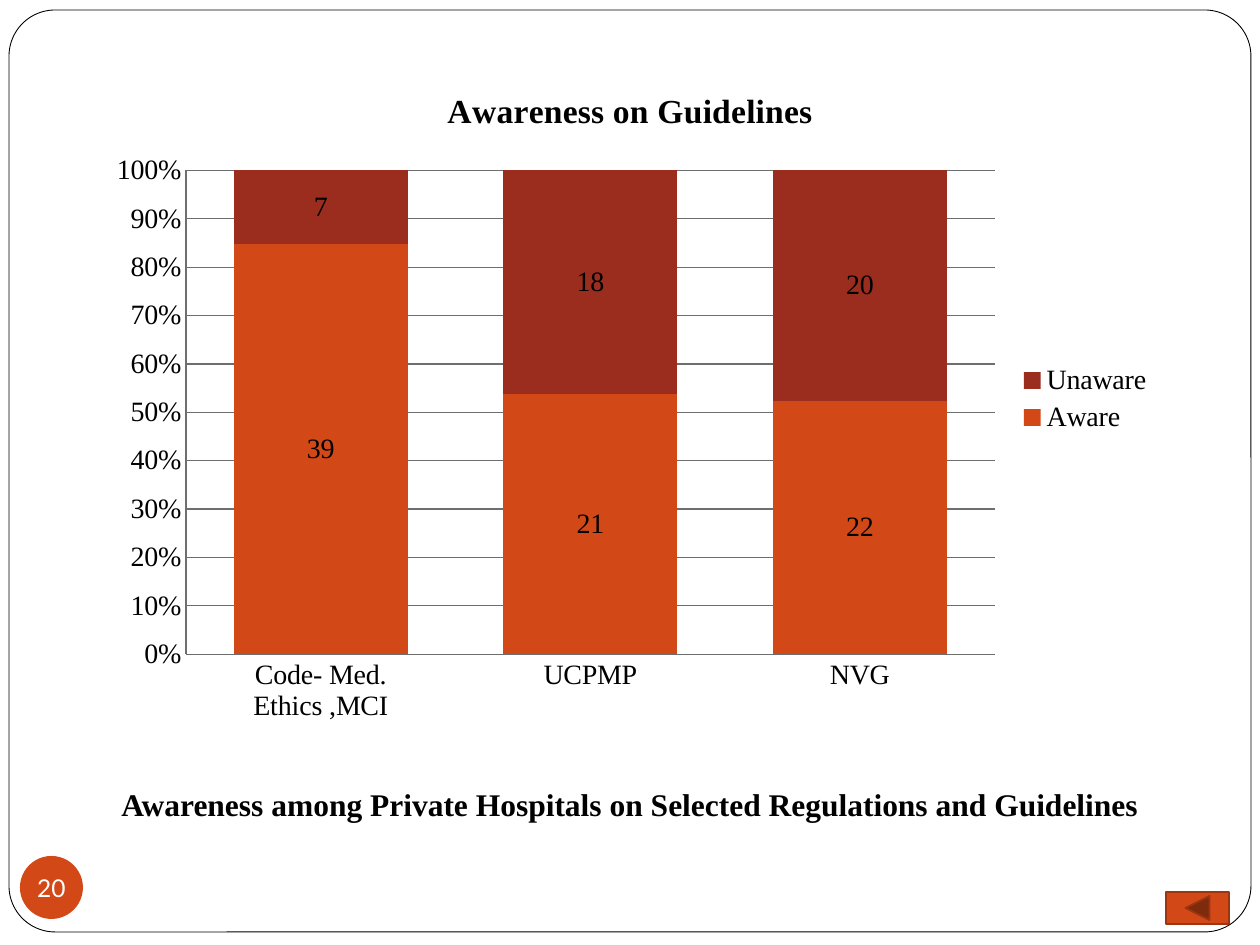
import dataclasses

import lxml.etree
import pptx
import pptx.chart.data
import pptx.dml.color
import pptx.enum.chart
import pptx.enum.shapes
import pptx.enum.text
import pptx.oxml
import pptx.util

EMU_PER_PX = 914400 / 126


@dataclasses.dataclass(frozen=True)
class Theme:
    """Colours, fonts and type sizes of the slide."""
    white: str = "FFFFFF"
    black: str = "000000"
    orange: str = "D34817"
    dark_orange: str = "9C3511"
    red: str = "9B2D1F"
    grid: str = "6E6E6E"
    serif: str = "Times New Roman"
    sans: str = "Lato"
    chart_size: float = 16
    chart_title_size: float = 19.2
    caption_size: float = 18
    number_size: float = 14


THEME = Theme()


def px(*lengths):
    """Turn pixel lengths into EMU."""
    return [pptx.util.Emu(round(length * EMU_PER_PX)) for length in lengths]


def rgb(colour):
    """Turn a hex string into a colour."""
    return pptx.dml.color.RGBColor.from_string(colour)


def style_font(font, name, size, colour, bold=False):
    """Set face, size, colour and weight."""
    font.name = name
    font.size = pptx.util.Pt(size)
    font.color.rgb = rgb(colour)
    font.bold = bold


def add_preset(slide, preset, box, fill, line=None, width=1):
    """Add a filled preset shape with an optional outline."""
    shape = slide.shapes.add_shape(preset, *px(*box))
    shape.shadow.inherit = False
    shape.fill.solid()
    shape.fill.fore_color.rgb = rgb(fill)
    if line:
        shape.line.color.rgb = rgb(line)
        shape.line.width = pptx.util.Pt(width)
    else:
        shape.line.fill.background()
    return shape


def set_centred_text(shape, text, name, size, colour, bold=False, wrap=True):
    """Write one centred paragraph into a shape without insets."""
    frame = shape.text_frame
    frame.text = text
    frame.word_wrap = wrap
    frame.auto_size = pptx.enum.text.MSO_AUTO_SIZE.NONE
    frame.vertical_anchor = pptx.enum.text.MSO_ANCHOR.MIDDLE
    frame.margin_left = frame.margin_right = 0
    frame.margin_top = frame.margin_bottom = 0
    paragraph = frame.paragraphs[0]
    paragraph.alignment = pptx.enum.text.PP_ALIGN.CENTER
    style_font(paragraph.runs[0].font, name, size, colour, bold)


def set_caption(slide, text, box):
    """Place the slide title below the chart."""
    caption = slide.shapes.title
    caption.left, caption.top, caption.width, caption.height = px(*box)
    set_centred_text(caption, text, THEME.serif, THEME.caption_size,
                     THEME.black, bold=True)
    return caption


def set_plot_layout(chart, **fractions):
    """Fix the inner plot area as fractions of the chart."""
    plot_area = chart.element.chart.plotArea
    for old in plot_area.findall(pptx.oxml.ns.qn("c:layout")):
        plot_area.remove(old)
    layout = lxml.etree.Element(pptx.oxml.ns.qn("c:layout"))
    manual = lxml.etree.SubElement(layout, pptx.oxml.ns.qn("c:manualLayout"))
    settings = {"layoutTarget": "inner", "xMode": "edge", "yMode": "edge"}
    for tag, value in {**settings, **fractions}.items():
        setting = lxml.etree.SubElement(manual, pptx.oxml.ns.qn(f"c:{tag}"))
        setting.set("val", str(value))
    plot_area.insert(0, layout)


def style_axes(chart):
    """Format both axes and the gridlines."""
    for axis in (chart.category_axis, chart.value_axis):
        axis.major_tick_mark = pptx.enum.chart.XL_TICK_MARK.NONE
        axis.format.line.color.rgb = rgb(THEME.grid)
    percent = chart.value_axis
    percent.tick_labels.number_format = "0%"
    percent.tick_labels.number_format_is_linked = False
    percent.major_gridlines.format.line.color.rgb = rgb(THEME.grid)


def add_awareness_chart(slide, title, categories, series, box):
    """Add the 100% stacked column chart with value labels."""
    awareness = pptx.chart.data.CategoryChartData()
    awareness.categories = categories
    for name, counts, _ in series:
        awareness.add_series(name, counts)
    chart = slide.shapes.add_chart(
        pptx.enum.chart.XL_CHART_TYPE.COLUMN_STACKED_100, *px(*box), awareness).chart
    style_font(chart.font, THEME.serif, THEME.chart_size, THEME.black)
    chart.has_title = True
    heading = chart.chart_title.text_frame
    heading.text = title
    style_font(heading.paragraphs[0].runs[0].font, THEME.serif,
               THEME.chart_title_size, THEME.black, bold=True)
    chart.has_legend = True
    chart.legend.position = pptx.enum.chart.XL_LEGEND_POSITION.RIGHT
    chart.legend.include_in_layout = False
    style_axes(chart)
    plot = chart.plots[0]
    plot.gap_width = 55
    plot.overlap = 100
    plot.vary_by_categories = False
    for columns, (_, _, colour) in zip(plot.series, series):
        columns.format.fill.solid()
        columns.format.fill.fore_color.rgb = rgb(colour)
        columns.data_labels.show_value = True
        style_font(columns.data_labels.font, THEME.serif, THEME.chart_size, THEME.black)
    set_plot_layout(chart, x=0.085, y=0.16, w=0.755, h=0.72)


def main():
    """Build the slide and save it."""
    presentation = pptx.Presentation()
    presentation.slide_width, presentation.slide_height = px(1260, 945)
    slide = presentation.slides.add_slide(presentation.slide_layouts[5])
    presets = pptx.enum.shapes.MSO_SHAPE

    caption = set_caption(
        slide, "Awareness among Private Hospitals on Selected Regulations and Guidelines",
        (63, 782, 1134, 44))
    border = add_preset(slide, presets.ROUNDED_RECTANGLE, (9, 10, 1242, 922),
                        THEME.white, THEME.black, 0.5)
    border.adjustments[0] = 0.05
    caption.element.addprevious(border.element)

    number = add_preset(slide, presets.OVAL, (20, 856, 63, 63), THEME.orange)
    set_centred_text(number, "20", THEME.sans, THEME.number_size, THEME.white, wrap=False)
    add_preset(slide, presets.ACTION_BUTTON_BACK_OR_PREVIOUS, (1166, 892, 63, 32),
               THEME.orange, THEME.dark_orange)
    add_awareness_chart(
        slide, "Awareness on Guidelines",
        ["Code- Med. Ethics ,MCI", "UCPMP", "NVG"],
        [("Aware", (39, 21, 22), THEME.orange),
         ("Unaware", (7, 18, 20), THEME.red)],
        (95, 63, 1071, 672))
    presentation.save("out.pptx")


if __name__ == "__main__":
    main()
